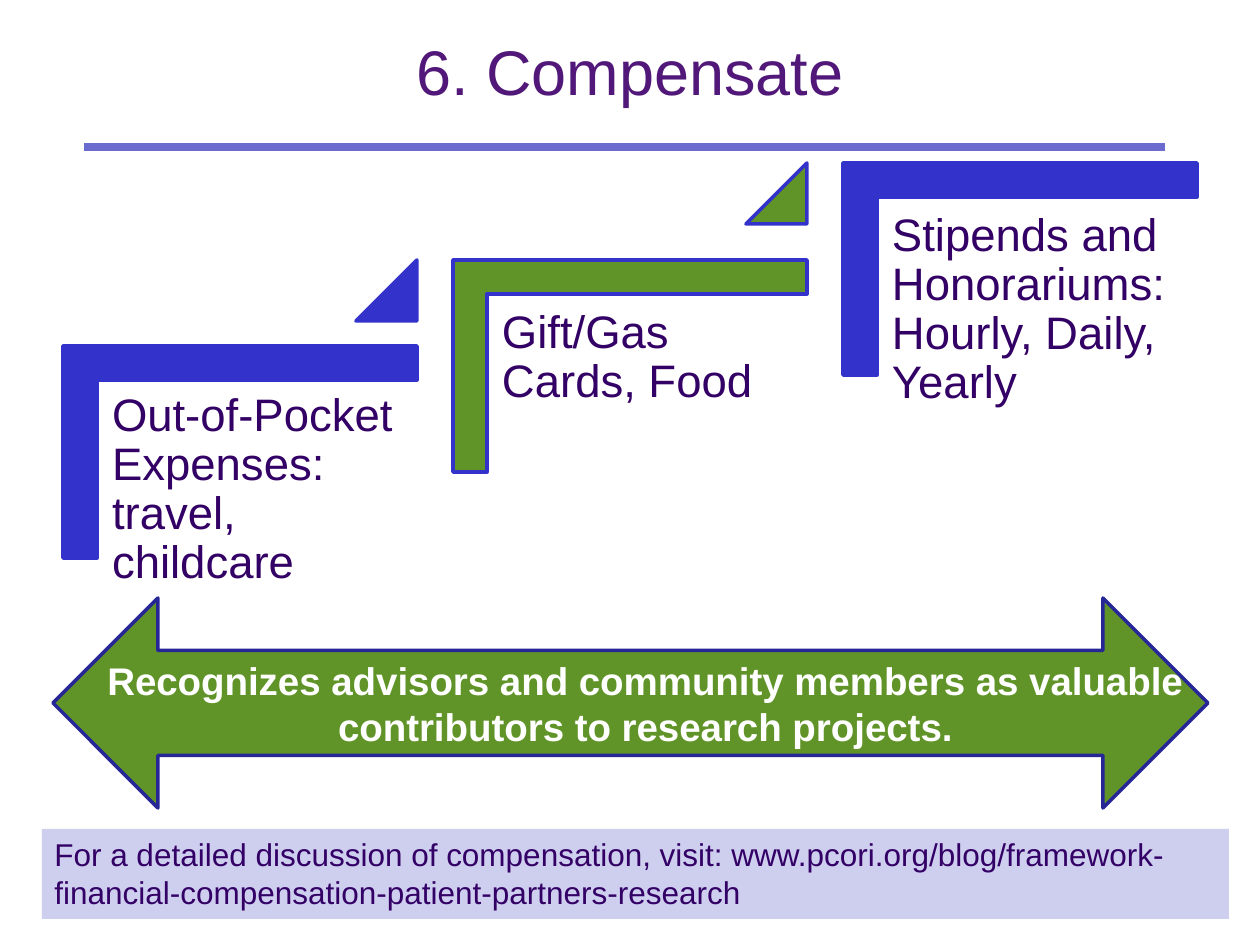
from lxml import etree
from pptx import Presentation
from pptx.dml.color import RGBColor
from pptx.enum.shapes import MSO_CONNECTOR, MSO_SHAPE
from pptx.enum.text import MSO_ANCHOR, PP_ALIGN
from pptx.oxml.ns import qn
from pptx.util import Emu, Pt

PX = 914400 // 126
BLUE = RGBColor(0x33, 0x33, 0xCC)
GREEN = RGBColor(0x61, 0x94, 0x28)
NAVY = RGBColor(0x26, 0x26, 0x97)
RULE = RGBColor(0x6B, 0x6B, 0xCF)
LAVENDER = RGBColor(0xCE, 0xCE, 0xEF)
INK = RGBColor(0x33, 0x00, 0x66)
PURPLE = RGBColor(0x51, 0x18, 0x79)
WHITE = RGBColor(0xFF, 0xFF, 0xFF)

TITLE = "6. Compensate"
# Step text, colour, top of its corner, top of its text
STEPS = [
    ("Out-of-Pocket Expenses: travel, childcare", BLUE, 346, 378),
    ("Gift/Gas Cards, Food", GREEN, 260, 295),
    ("Stipends and Honorariums: Hourly, Daily, Yearly", BLUE, 163, 198),
]
MESSAGE = ("Recognizes advisors and community members as valuable "
           "contributors to research projects.")
REFERENCE = ("For a detailed discussion of compensation, visit: "
             "www.pcori.org/blog/framework-financial-compensation-patient-partners-research")

STEP_LEFT, STEP_PITCH = 63, 390
CORNER_W, CORNER_H, CORNER_BAR = 354, 212, 35
LABEL_W, LABEL_H, LABEL_INSET = 319, 280, 14
TRIANGLE = 61


def px(*lengths):
    return [Emu(length * PX) for length in lengths]


def add_shape(kind, box, fill, line=None):
    shape = slide.shapes.add_shape(kind, *px(*box))
    shape.shadow.inherit = False
    shape.fill.solid()
    shape.fill.fore_color.rgb = fill
    if line is None:
        shape.line.fill.background()
    else:
        shape.line.color.rgb = line
        shape.line.width = Pt(2)
    return shape


def write(shape, text, size, color, align=PP_ALIGN.LEFT, bold=False,
          spacing=None, inset=None):
    frame = shape.text_frame
    frame.word_wrap = True
    frame.vertical_anchor = MSO_ANCHOR.TOP
    if inset is not None:
        frame.margin_left, frame.margin_top, frame.margin_right, frame.margin_bottom = px(*[inset] * 4)
    paragraph = frame.paragraphs[0]
    paragraph.alignment = align
    if spacing is not None:
        paragraph.line_spacing = spacing
    run = paragraph.add_run()
    run.text = text
    run.font.name = "Arial"
    run.font.size = Pt(size)
    run.font.bold = bold
    run.font.color.rgb = color


def add_text(box, *args, **options):
    write(slide.shapes.add_textbox(*px(*box)), *args, **options)


prs = Presentation()
prs.slide_width, prs.slide_height = px(1260, 945)
slide = prs.slides.add_slide(prs.slide_layouts[6])

# Reference strip
reference = add_shape(MSO_SHAPE.RECTANGLE, (42, 829, 1187, 90), LAVENDER)
write(reference, REFERENCE, 18, INK)

# Title and rule
add_text((63, 38, 1134, 157), TITLE, 36, PURPLE, PP_ALIGN.CENTER, spacing=0.85)
rule = slide.shapes.add_connector(MSO_CONNECTOR.STRAIGHT, *px(84, 147, 1165, 147))
rule.line.color.rgb = RULE
rule.line.width = Pt(4.5)
etree.SubElement(rule.element.spPr, qn("a:effectLst"))

# Rising steps: each triangle is level with the next step's corner
for index, (text, color, top, label_top) in enumerate(STEPS):
    left = STEP_LEFT + index * STEP_PITCH
    shift = (CORNER_W - CORNER_H) // 2
    corner = add_shape(MSO_SHAPE.CORNER,
                       (left + shift, top - shift, CORNER_H, CORNER_W), color, BLUE)
    corner.rotation = 90
    for side in range(2):
        corner.adjustments[side] = 0.16
    add_text((left + CORNER_BAR, label_top, LABEL_W, LABEL_H), text, 26, INK,
             spacing=0.9, inset=LABEL_INSET)
    if index + 1 < len(STEPS):
        next_top = STEPS[index + 1][2]
        triangle = add_shape(
            MSO_SHAPE.ISOSCELES_TRIANGLE,
            (left + CORNER_W - TRIANGLE, next_top, TRIANGLE, TRIANGLE), color, BLUE)
        triangle.adjustments[0] = 1

# Message arrow
add_shape(MSO_SHAPE.LEFT_RIGHT_ARROW, (53, 598, 1155, 210), GREEN, NAVY)
add_text((94, 651, 1103, 106), MESSAGE, 22, WHITE, PP_ALIGN.CENTER, bold=True)

prs.save("out.pptx")
